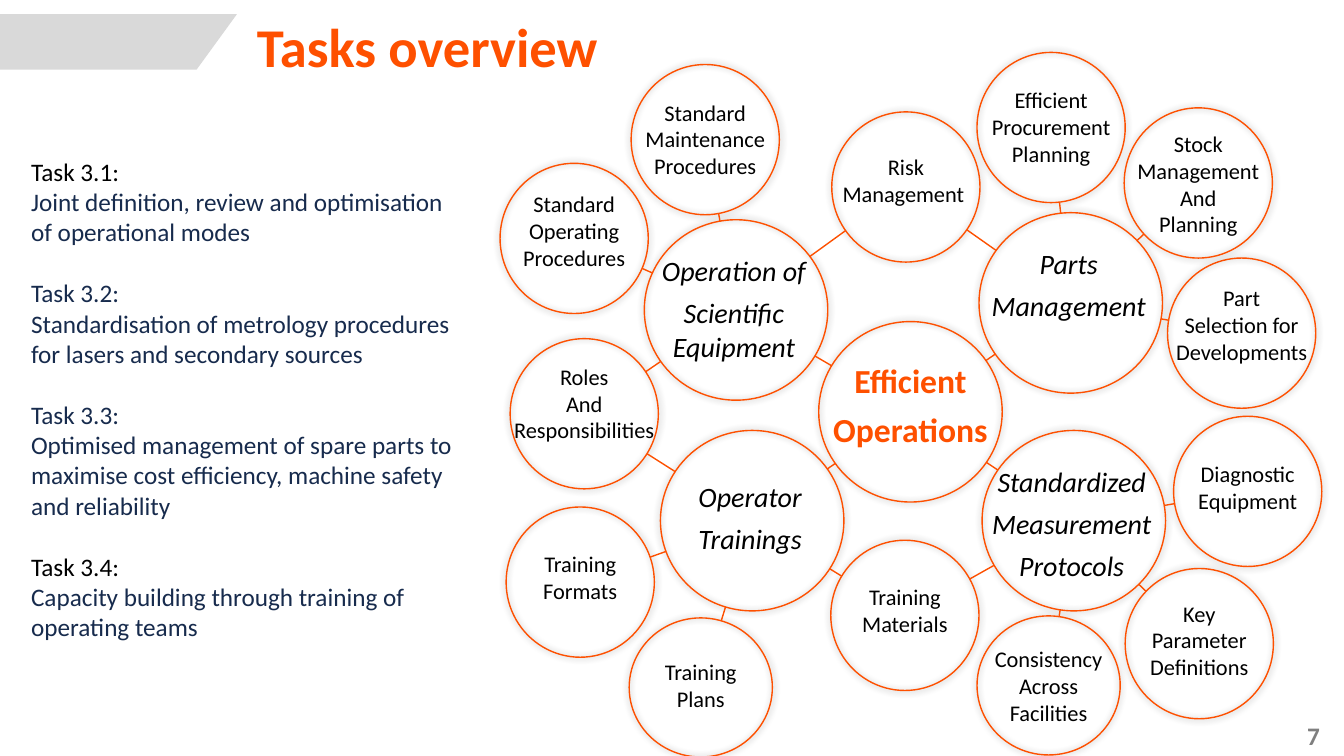
"""Build the tasks overview slide: a task list beside a map of linked circles."""
from math import hypot

from lxml import etree
from pptx import Presentation
from pptx.dml.color import RGBColor
from pptx.enum.shapes import MSO_CONNECTOR, MSO_SHAPE
from pptx.enum.text import MSO_AUTO_SIZE, PP_ALIGN
from pptx.oxml.ns import qn
from pptx.util import Inches, Pt

OVAL = MSO_SHAPE.OVAL
STRAIGHT = MSO_CONNECTOR.STRAIGHT
LEFT, CENTER, RIGHT = PP_ALIGN.LEFT, PP_ALIGN.CENTER, PP_ALIGN.RIGHT
FIT, FIXED = MSO_AUTO_SIZE.SHAPE_TO_FIT_TEXT, MSO_AUTO_SIZE.NONE

ORANGE = RGBColor(0xFE, 0x50, 0x00)
LINK_ORANGE = RGBColor(0xFD, 0x50, 0x00)
NAVY = RGBColor(0x17, 0x2B, 0x4D)
BLACK = RGBColor(0, 0, 0)
GREY = RGBColor(0x7F, 0x7F, 0x7F)
RIBBON_GREY = RGBColor(0xD9, 0xD9, 0xD9)

STEP = Inches(0.01)
COLUMNS, ROWS = 1333, 750

deck = Presentation()
deck.slide_width, deck.slide_height = COLUMNS * STEP, ROWS * STEP
page = deck.slides.add_slide(deck.slide_layouts[6])


def add_text(shapes, place, lines, formats, align=LEFT, wrap=True, gap=0):
    """Add a text box at a grid place, one paragraph a line, and return its frame."""
    box = shapes.add_textbox(*(value * STEP for value in place))
    frame = box.text_frame
    frame.word_wrap = wrap
    frame.auto_size = FIXED if wrap else FIT
    for index, line in enumerate(lines):
        para = frame.paragraphs[0] if index == 0 else frame.add_paragraph()
        para.alignment = align
        if index:
            para.space_before = Pt(gap)
        span = para.add_run()
        span.text = line
        for name, value in formats.items():
            setattr(span.font, name, value)
        span.font.color.rgb = BLACK
    return frame


def color_text(frame, color):
    """Give every span of a frame one colour."""
    for para in frame.paragraphs:
        for span in para.runs:
            span.font.color.rgb = color


ribbon_builder = page.shapes.build_freeform(0, 14, scale=STEP)
ribbon_builder.add_line_segments([(235, 14), (195, 69), (0, 69)], close=True)
ribbon = ribbon_builder.convert_to_shape()
ribbon.shadow.inherit = False
ribbon.fill.solid()
ribbon.fill.fore_color.rgb = RIBBON_GREY
ribbon.line.fill.background()

page_number = add_text(page.shapes, (1200, 710, 119, 40), ["7"],
                       {"name": "Calibri", "size": Pt(18), "bold": True}, RIGHT)
color_text(page_number, GREY)
title = add_text(page.shapes, (245, 15, 992, 56), ["Tasks overview"],
                 {"name": "Calibri", "size": Pt(39), "bold": True})
title.paragraphs[0].line_spacing = 0.9
color_text(title, ORANGE)

LEAF_FORMAT = {"name": "Calibri", "size": Pt(16)}
KINDS = {
    "hub": (182, 179, {"name": "Calibri", "size": Pt(24), "bold": True}, True, 6),
    "topic": (182, 179, {"name": "Calibri", "size": Pt(20), "italic": True}, True, 6),
    "leaf": (147, 149, LEAF_FORMAT, False, 0),
    "small leaf": (142, 138, LEAF_FORMAT, False, 0),
}
LABEL_WIDTH, LABEL_HEIGHT = 230, 96

CIRCLES = {
    "hub": ("hub", 903, 408.5, 352, ["Efficient", "Operations"]),
    "equipment": ("topic", 730, 307.5, 247, ["Operation of", "Scientific Equipment"]),
    "operating": ("leaf", 569.5, 236.5, 184, ["Standard", "Operating", "Procedures"]),
    "risk": ("leaf", 898.5, 185.5, 147, ["Risk", "Management "]),
    "maintenance": ("leaf", 699.5, 138.5, 93, ["Standard", "Maintenance", "Procedures"]),
    "roles": ("leaf", 579.5, 410.5, 355, ["Roles", "And", "Responsibilities"]),
    "parts": ("topic", 1062, 300.5, 240, ["Parts", "Management"]),
    "selection": ("leaf", 1231.5, 330.5, 277, ["Part", "Selection for", "Developments"]),
    "procurement": ("leaf", 1042.5, 126.5, 81, ["Efficient", "Procurement", "Planning"]),
    "stock": ("leaf", 1188.5, 181.5, 124, ["Stock", "Management", "And", "Planning"]),
    "protocols": ("topic", 1065, 516.5, 456, ["Standardized", "Measurement", "Protocols"]),
    "trainings": ("topic", 746, 516.5, 471, ["Operator", "Trainings"]),
    "formats": ("leaf", 575.5, 577.5, 541, ["Training", "Formats"]),
    "materials": ("leaf", 897.5, 610.5, 574, ["Training", "Materials"]),
    "plans": ("small leaf", 695, 682, 648, ["Training", "Plans"]),
    "parameters": ("leaf", 1189.5, 638.5, 590, ["Key", "Parameter", "Definitions"]),
    "diagnostic": ("leaf", 1237.5, 487.5, 452, ["Diagnostic", "Equipment"]),
    "consistency": ("small leaf", 1040, 680, 635, ["Consistency", "Across", "Facilities"]),
}

for kind, middle_x, middle_y, label_top, lines in CIRCLES.values():
    width, height, formats, wrap, gap = KINDS[kind]
    group = page.shapes.add_group_shape()
    shift = -2 if kind == "topic" else 0
    place = (middle_x + shift - LABEL_WIDTH / 2, label_top, LABEL_WIDTH, LABEL_HEIGHT)
    place = [round(value * 2) / 2 for value in place]
    label = add_text(group.shapes, [int(value * 2) / 2 for value in place],
                     lines, formats, CENTER, wrap, gap)
    if kind == "hub":
        color_text(label, ORANGE)
    circle = group.shapes.add_shape(
        OVAL, int((middle_x - width / 2) * STEP), int((middle_y - height / 2) * STEP),
        width * STEP, height * STEP)
    circle.fill.background()
    circle.line.color.rgb = ORANGE
    circle.line.width = Pt(1)
    circle.shadow.inherit = False
    effects = circle._element.spPr.find(qn("a:effectLst"))
    glow = etree.SubElement(effects, qn("a:outerShdw"), blurRad=str(Pt(5)), dist="0",
                            dir="0", algn="ctr", rotWithShape="0")
    tint = etree.SubElement(glow, qn("a:srgbClr"), val="000000")
    etree.SubElement(tint, qn("a:alpha"), val="40000")

LINKS = {
    "hub": ["equipment", "trainings", "protocols", "parts"],
    "trainings": ["materials", "plans", "formats", "roles"],
    "equipment": ["roles", "operating", "maintenance", "risk"],
    "parts": ["risk", "stock", "procurement", "selection"],
    "protocols": ["diagnostic", "parameters", "consistency", "materials"],
}

for source, targets in LINKS.items():
    for target in targets:
        ends = []
        for near, far in ((source, target), (target, source)):
            kind, near_x, near_y = CIRCLES[near][:3]
            far_x, far_y = CIRCLES[far][1:3]
            width, height = KINDS[kind][:2]
            run, rise = far_x - near_x, far_y - near_y
            share = 1 / hypot(run / (width / 2), rise / (height / 2))
            ends += [int((near_x + run * share) * STEP), int((near_y + rise * share) * STEP)]
        link = page.shapes.add_connector(STRAIGHT, *ends)
        link.line.color.rgb = LINK_ORANGE
        link.line.width = Pt(1)
        etree.SubElement(link._element.spPr, qn("a:effectLst"))

TASKS = [
    (BLACK, ["Task 3.1:", "Joint definition, review and optimisation",
             "of operational modes"]),
    (NAVY, ["Task 3.2:", "Standardisation of metrology procedures",
            "for lasers and secondary sources"]),
    (NAVY, ["Task 3.3:", "Optimised management of spare parts to",
            "maximise cost efficiency, machine safety", "and reliability"]),
    (BLACK, ["Task 3.4:", "Capacity building through training of", "operating teams"]),
]
task_lines = [line for _, lines in TASKS for line in lines]
task_list = add_text(page.shapes, (21, 150, 448, 495), task_lines,
                     {"name": "Calibri", "size": Pt(18)}, wrap=False)
color_text(task_list, NAVY)
heading_index = 0
for heading_color, lines in TASKS:
    heading = task_list.paragraphs[heading_index]
    heading.runs[0].font.color.rgb = heading_color
    if heading_index:
        heading.space_before = Pt(22)
    heading_index += len(lines)

deck.save("out.pptx")
